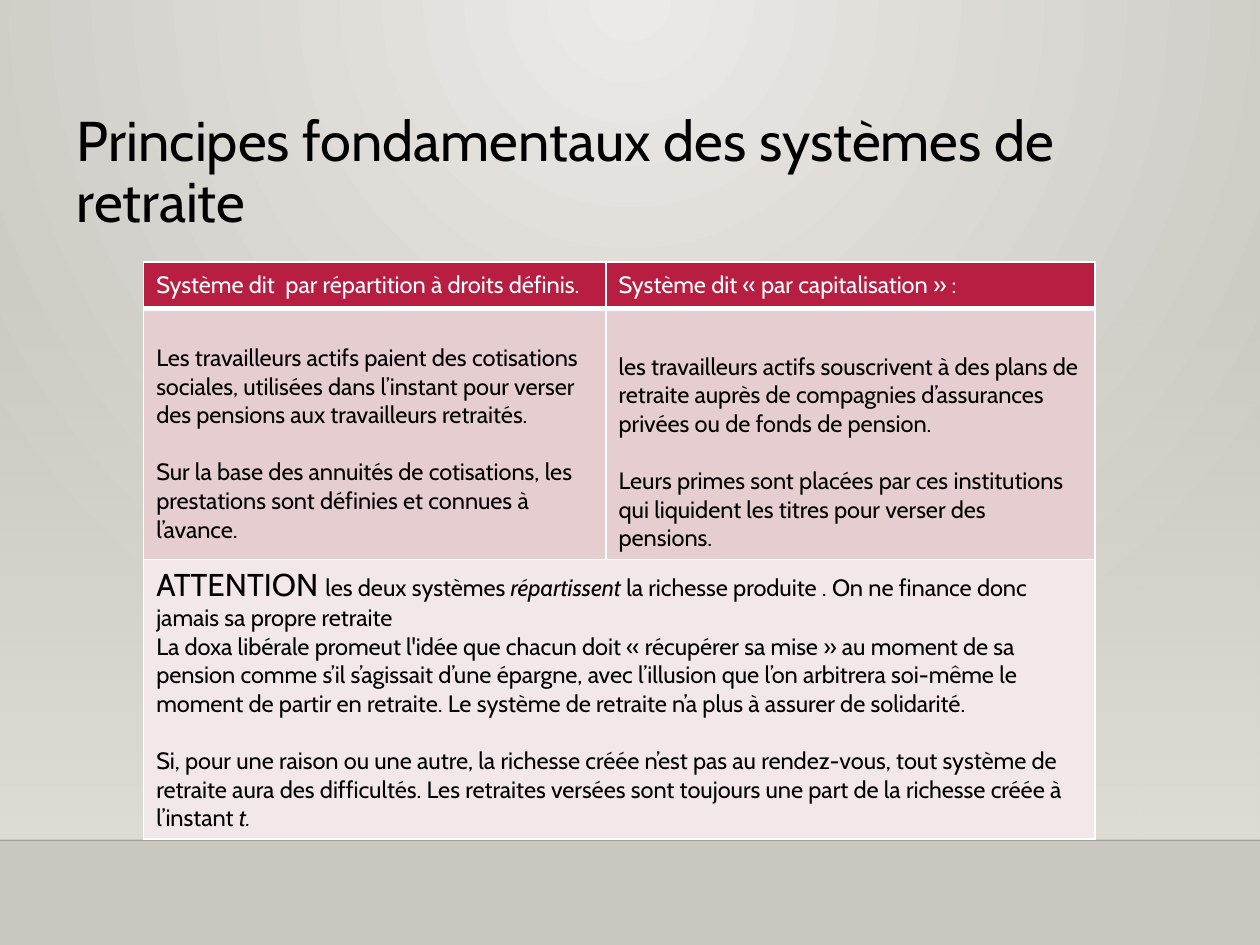
from lxml import etree
from pptx import Presentation
from pptx.dml.color import RGBColor
from pptx.enum.shapes import MSO_CONNECTOR, MSO_SHAPE
from pptx.enum.text import MSO_ANCHOR, MSO_AUTO_SIZE, PP_ALIGN
from pptx.oxml.ns import qn
from pptx.util import Inches, Pt

RECTANGLE = MSO_SHAPE.RECTANGLE
STRAIGHT = MSO_CONNECTOR.STRAIGHT
MIDDLE, TOP = MSO_ANCHOR.MIDDLE, MSO_ANCHOR.TOP
LEFT = PP_ALIGN.LEFT

THEME = {
    "font": "Cabin", "title": 32, "body": 13.5, "emphasis": 18, "gap": 16.4,
    "text": "000000", "white": "FFFFFF", "header": "B71E42",
    "row": "E6CDCF", "notice": "F3E8E9", "center": "ECEAE7",
    "edge": "CAC7C1", "wall": "DFDBD5", "floor_line": "000001",
}


def add_run(paragraph, text, size=THEME["body"], color=THEME["text"], italic=False):
    run = paragraph.add_run()
    run.text = text
    formats = {"name": THEME["font"], "size": Pt(size), "bold": False, "italic": italic}
    for name, value in formats.items():
        setattr(run.font, name, value)
    run.font.color.rgb = RGBColor.from_string(color)


def set_alpha(element, percent):
    color = next(element.iter(qn("a:srgbClr")))
    etree.SubElement(color, qn("a:alpha")).set("val", str(percent * 1000))


presentation = Presentation()
presentation.slide_width = Inches(10)
presentation.slide_height = Inches(7.5)
slide = presentation.slides.add_slide(presentation.slide_layouts[5])

background = slide.background.fill
background.gradient()
for stop, color in zip(background.gradient_stops, ("center", "edge")):
    stop.color.rgb = RGBColor.from_string(THEME[color])
gradient = next(slide.element.iter(qn("a:gradFill")))
for position, stop in zip(("0", "100000"), gradient.iter(qn("a:gs"))):
    stop.set("pos", position)
gradient.remove(gradient.find(qn("a:lin")))
circle = etree.SubElement(gradient, qn("a:path"))
circle.set("path", "circle")
center = etree.SubElement(circle, qn("a:fillToRect"))
for side, value in {"l": "43000", "t": "0", "r": "43000", "b": "100000"}.items():
    center.set(side, value)

wall = slide.shapes.add_shape(RECTANGLE, Inches(0), Inches(2.2), Inches(10), Inches(4.46))
wall.shadow.inherit = False
wall.line.fill.background()
wall.fill.gradient()
wall.fill.gradient_angle = 270
for stop in wall.fill.gradient_stops:
    stop.color.rgb = RGBColor.from_string(THEME["wall"])
wall_stops = list(wall.element.iter(qn("a:gs")))
for position, stop in zip(("0", "100000"), wall_stops):
    stop.set("pos", position)
set_alpha(wall_stops[0], 0)

floor_line = slide.shapes.add_connector(STRAIGHT, Inches(0), Inches(6.67), Inches(10), Inches(6.67))
floor_line.line.width = Pt(1)
floor_line.line.color.rgb = RGBColor.from_string(THEME["floor_line"])
set_alpha(floor_line.element.spPr, 20)
etree.SubElement(floor_line.element.spPr, qn("a:effectLst"))

title = slide.shapes.title
title_box = {"left": 0.61, "top": 0.68, "width": 8.72, "height": 1.4}
for name, value in title_box.items():
    setattr(title, name, Inches(value))
title_frame = {
    "margin_left": 0, "margin_top": 0, "margin_right": 0, "margin_bottom": 0,
    "word_wrap": True, "vertical_anchor": MIDDLE, "auto_size": MSO_AUTO_SIZE.NONE,
}
for name, value in title_frame.items():
    setattr(title.text_frame, name, value)
paragraph = title.text_frame.paragraphs[0]
paragraph.alignment = LEFT
paragraph.line_spacing = 0.9
add_run(paragraph, "Principes fondamentaux des systèmes de retraite", THEME["title"])

column_widths = (3.67, 3.88)
row_heights = (0.37, 1.99, 2.22)
table = slide.shapes.add_table(
    3, 2, Inches(1.14), Inches(2.08), Inches(sum(column_widths)), Inches(sum(row_heights))
).table
for column, width in zip(table.columns, column_widths):
    column.width = Inches(width)
for row, height in zip(table.rows, row_heights):
    row.height = Inches(height)
table.cell(2, 0).merge(table.cell(2, 1))

row_styles = [
    {"fill": "header", "color": "white", "anchor": MIDDLE},
    {"fill": "row", "color": "text", "anchor": TOP},
    {"fill": "notice", "color": "text", "anchor": MIDDLE},
]
contents = {
    (0, 0): [[("Système dit  par répartition à droits définis.", {})]],
    (0, 1): [[("Système dit « par capitalisation » :", {})]],
    (1, 0): [
        [("Les travailleurs actifs paient des cotisations sociales, utilisées dans l’instant "
          "pour verser des pensions aux travailleurs retraités.", {})],
        [("Sur la base des annuités de cotisations, les prestations sont définies et connues "
          "à l’avance.", {})],
    ],
    (1, 1): [
        [("les travailleurs actifs souscrivent à des plans de retraite auprès de compagnies "
          "d’assurances privées ou de fonds de pension.", {})],
        [("Leurs primes sont placées par ces institutions qui liquident les titres pour "
          "verser des pensions.", {})],
    ],
    (2, 0): [
        [("ATTENTION ", {"size": THEME["emphasis"]}),
         ("les deux systèmes ", {}),
         ("répartissent ", {"italic": True}),
         ("la richesse produite . On ne finance donc jamais sa propre retraite", {})],
        [("La doxa libérale promeut l'idée que chacun doit « récupérer sa mise » au moment de "
          "sa pension comme s’il s’agissait d’une épargne, avec l’illusion que l’on arbitrera "
          "soi-même le moment de partir en retraite. Le système de retraite n’a plus à assurer "
          "de solidarité.", {})],
        [("Si, pour une raison ou une autre, la richesse créée n’est pas au rendez-vous, tout "
          "système de retraite aura des difficultés. Les retraites versées sont toujours une "
          "part de la richesse créée à", {})],
        [("l’instant ", {}), ("t.", {"italic": True})],
    ],
}
top_margins = {(1, 0): 0.28, (1, 1): 0.35}
spaced_paragraphs = {(1, 0, 1), (1, 1, 1), (2, 0, 2)}

for (row, column), paragraphs in contents.items():
    cell = table.cell(row, column)
    style = row_styles[row]
    cell.vertical_anchor = style["anchor"]
    cell.margin_top = Inches(top_margins.get((row, column), 0.05))
    for index, runs in enumerate(paragraphs):
        frame = cell.text_frame
        paragraph = frame.add_paragraph() if index else frame.paragraphs[0]
        paragraph.alignment = LEFT
        if (row, column, index) in spaced_paragraphs:
            paragraph.space_before = Pt(THEME["gap"])
        for text, formats in runs:
            add_run(paragraph, text, color=THEME[style["color"]], **formats)

for row, style in enumerate(row_styles):
    for column in range(2):
        cell = table.cell(row, column)
        properties = cell._tc.get_or_add_tcPr()
        widths = {"L": 1, "R": 1, "T": 3 if row == 1 else 1, "B": 3 if row == 0 else 1}
        for side, width in widths.items():
            border = etree.SubElement(properties, qn(f"a:ln{side}"))
            border.set("w", str(Pt(width)))
            fill = etree.SubElement(border, qn("a:solidFill"))
            etree.SubElement(fill, qn("a:srgbClr")).set("val", THEME["white"])
        cell.fill.solid()
        cell.fill.fore_color.rgb = RGBColor.from_string(THEME[style["fill"]])

presentation.save("out.pptx")
